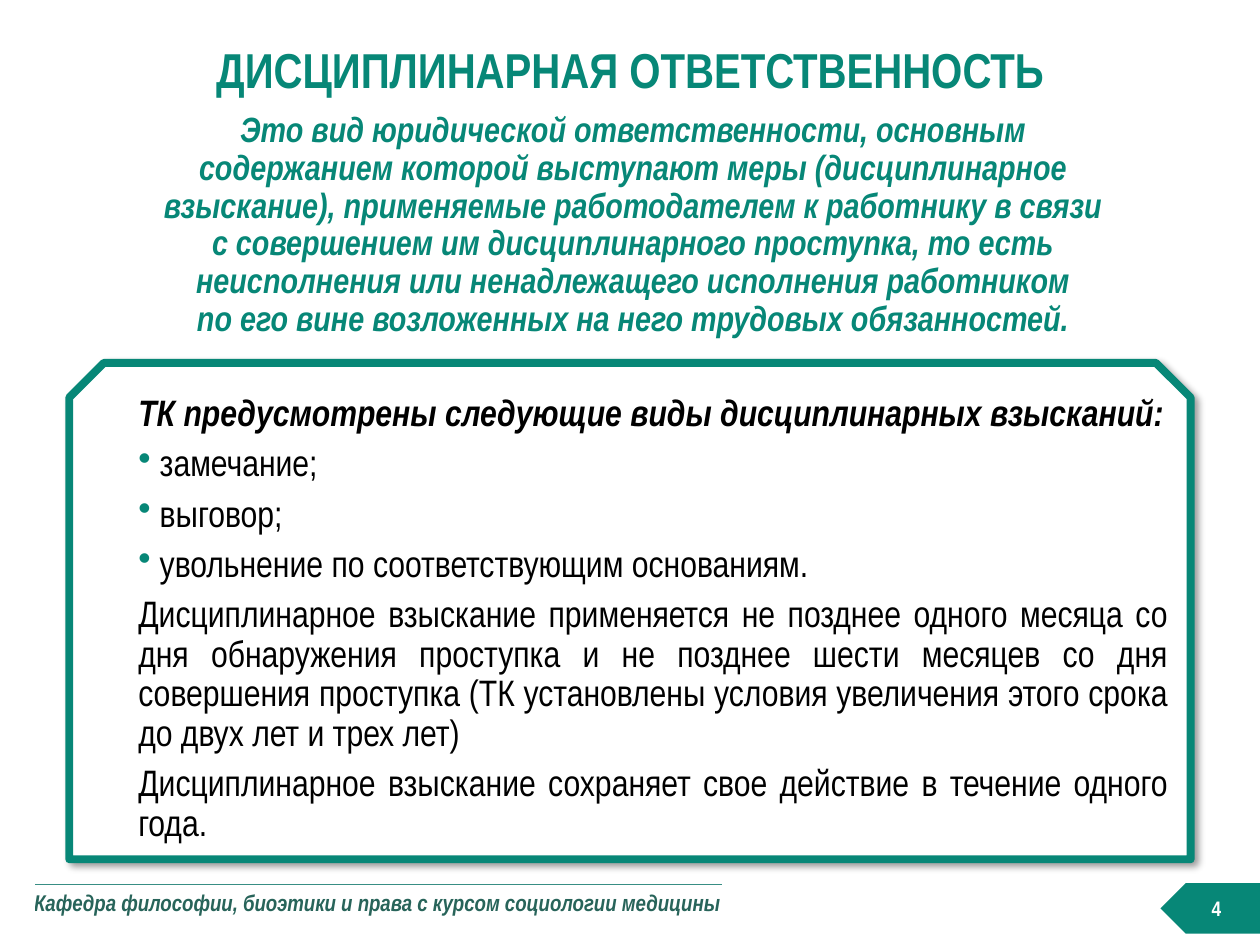
from lxml import etree
from pptx import Presentation
from pptx import util as u
from pptx.dml.color import RGBColor
from pptx.enum import shapes, text
from pptx.oxml import parse_xml
from pptx.oxml.ns import nsdecls, qn

TEAL, WHITE, BLACK = "078777", "FFFFFF", "000000"
COLUMNS, ROWS = 100, 75


def color(value):
    return RGBColor.from_string(value)


def element(markup):
    tag, rest = markup.split(" ", 1)
    return parse_xml(f"<a:{tag} {nsdecls('a')} {rest}")


class Slide:
    font = "Arial Narrow"

    def __init__(self, deck):
        self.deck = deck
        self.page = deck.slides.add_slide(deck.slide_layouts[6])

    def area(self, left, top, width, height):
        column = self.deck.slide_width / COLUMNS
        row = self.deck.slide_height / ROWS
        return [u.Emu(round(n * step)) for n, step in
                zip((left, top, width, height), (column, row, column, row))]

    def frame(self, box, insets, anchor):
        frame = box.text_frame
        sides = dict(zip(("margin_left", "margin_top", "margin_right", "margin_bottom"),
                         map(u.Inches, insets)))
        for name, value in {**sides, "word_wrap": True, "vertical_anchor": anchor}.items():
            setattr(frame, name, value)
        return frame

    def wording(self, para, words, size, ink, align="LEFT", spacing=None, before=0,
                bold=True, italic=False):
        para.text = words
        layout = {"alignment": getattr(text.PP_ALIGN, align), "space_before": u.Pt(before),
                  "line_spacing": spacing}
        for name, value in layout.items():
            setattr(para, name, value)
        look = {"name": self.font, "size": u.Pt(size), "bold": bold, "italic": italic}
        for span in para.runs:
            for name, value in look.items():
                setattr(span.font, name, value)
            span.font.color.rgb = color(ink)

    def title(self, area, words):
        box = self.page.shapes.add_textbox(*self.area(*area))
        frame = self.frame(box, (0, 0, 0, 0), text.MSO_ANCHOR.MIDDLE)
        self.wording(frame.paragraphs[0], words, 28, TEAL, "CENTER", 0.9)

    def shape(self, kind, area, fill, line=None):
        box = self.page.shapes.add_shape(kind, *self.area(*area))
        box.shadow.inherit = False
        box.fill.solid()
        box.fill.fore_color.rgb = color(fill)
        if line:
            box.line.color.rgb = color(line)
            box.line.width = u.Pt(4.5)
        else:
            box.line.fill.background()
        return box

    def definition(self, area, words):
        box = self.shape(shapes.MSO_SHAPE.RECTANGLE, area, WHITE)
        solid = box._element.spPr.find(qn("a:solidFill"))
        solid[0].append(element('alpha val="27000"/>'))
        frame = self.frame(box, (0.2, 0.04, 0.2, 0.04), text.MSO_ANCHOR.TOP)
        self.wording(frame.paragraphs[0], words, 20, TEAL, "CENTER", 0.9, italic=True)

    def panel(self, area, heading, penalties, rules):
        box = self.shape(shapes.MSO_SHAPE.SNIP_2_SAME_RECTANGLE, area, WHITE, TEAL)
        box.adjustments[0], box.adjustments[1] = 0.07, 0
        box._element.spPr.find(qn("a:effectLst")).append(element(
            f'outerShdw blurRad="{u.Pt(4)}" dist="{u.Pt(3)}" dir="2700000" algn="tl" '
            f'rotWithShape="0"><a:srgbClr val="{BLACK}"><a:alpha val="40000"/>'
            '</a:srgbClr></a:outerShdw>'))
        frame = self.frame(box, (0.04, 0, 0.04, 0), text.MSO_ANCHOR.MIDDLE)
        lines = [(heading, True, False)]
        lines += [(words, False, True) for words in penalties]
        lines += [(words, False, False) for words in rules]
        for number, (words, strong, bulleted) in enumerate(lines):
            para = frame.add_paragraph() if number else frame.paragraphs[0]
            self.indent(para, bulleted)
            self.wording(para, words, 21, BLACK, "JUSTIFY", 0.9, 6 if number else 0,
                         bold=strong, italic=strong)

    def indent(self, para, bulleted):
        props = para._p.get_or_add_pPr()
        hang = 0.17 if bulleted else 0
        props.set("marL", str(u.Inches(0.37 + hang)))
        props.set("indent", str(u.Inches(-hang)))
        if bulleted:
            props.append(element(f'buClr ><a:srgbClr val="{TEAL}"/></a:buClr>'))
            props.append(element('buChar char="•"/>'))
        else:
            etree.SubElement(props, qn("a:buNone"))

    def footer(self, area, words):
        table = self.page.shapes.add_table(1, 1, *self.area(*area)).table
        table.first_row = table.horz_banding = False
        cell = table.cell(0, 0)
        cell.fill.background()
        cell.margin_left = cell.margin_right = cell.margin_bottom = 0
        cell.margin_top = u.Inches(0.08)
        self.wording(cell.text_frame.paragraphs[0], words, 13, "28645A", italic=True)
        cell._tc.get_or_add_tcPr().insert(0, element(
            f'lnT w="{u.Pt(1)}"><a:solidFill><a:srgbClr val="388E84"/></a:solidFill></a:lnT>'))

    def page_number(self, area, words):
        box = self.shape(shapes.MSO_SHAPE.PENTAGON, area, TEAL)
        box._element.spPr.find(qn("a:xfrm")).set("flipH", "1")
        frame = self.frame(box, (0.1, 0.05, 0.1, 0.05), text.MSO_ANCHOR.MIDDLE)
        self.wording(frame.paragraphs[0], words, 12, WHITE, "CENTER")


def main():
    deck = Presentation()
    deck.slide_width, deck.slide_height = u.Inches(10), u.Inches(7.5)
    slide = Slide(deck)
    slide.footer((2.7, 70.2, 54.7, 4.3),
                 "Кафедра философии, биоэтики и права с курсом социологии медицины")
    slide.title((15.5, 3.1, 69, 5.4), "ДИСЦИПЛИНАРНАЯ ОТВЕТСТВЕННОСТЬ")
    slide.panel(
        (5.5, 28.8, 89, 39.4),
        "ТК предусмотрены следующие виды дисциплинарных взысканий:",
        ["замечание;", "выговор;", "увольнение по соответствующим основаниям."],
        ["Дисциплинарное взыскание применяется не позднее одного месяца со дня "
         "обнаружения проступка и не позднее шести месяцев со дня совершения проступка "
         "(ТК установлены условия увеличения этого срока до двух лет и трех лет)",
         "Дисциплинарное взыскание сохраняет свое действие в течение одного года."])
    slide.page_number((92.1, 70.1, 7.9, 4), "4")
    slide.definition(
        (10.9, 8.5, 78.7, 19.2),
        "Это вид юридической ответственности, основным содержанием которой выступают меры "
        "(дисциплинарное взыскание), применяемые работодателем к работнику в связи "
        "с совершением им дисциплинарного проступка, то есть неисполнения или "
        "ненадлежащего исполнения работником\n"
        "по его вине возложенных на него трудовых обязанностей.")
    deck.save("out.pptx")


if __name__ == "__main__":
    main()
